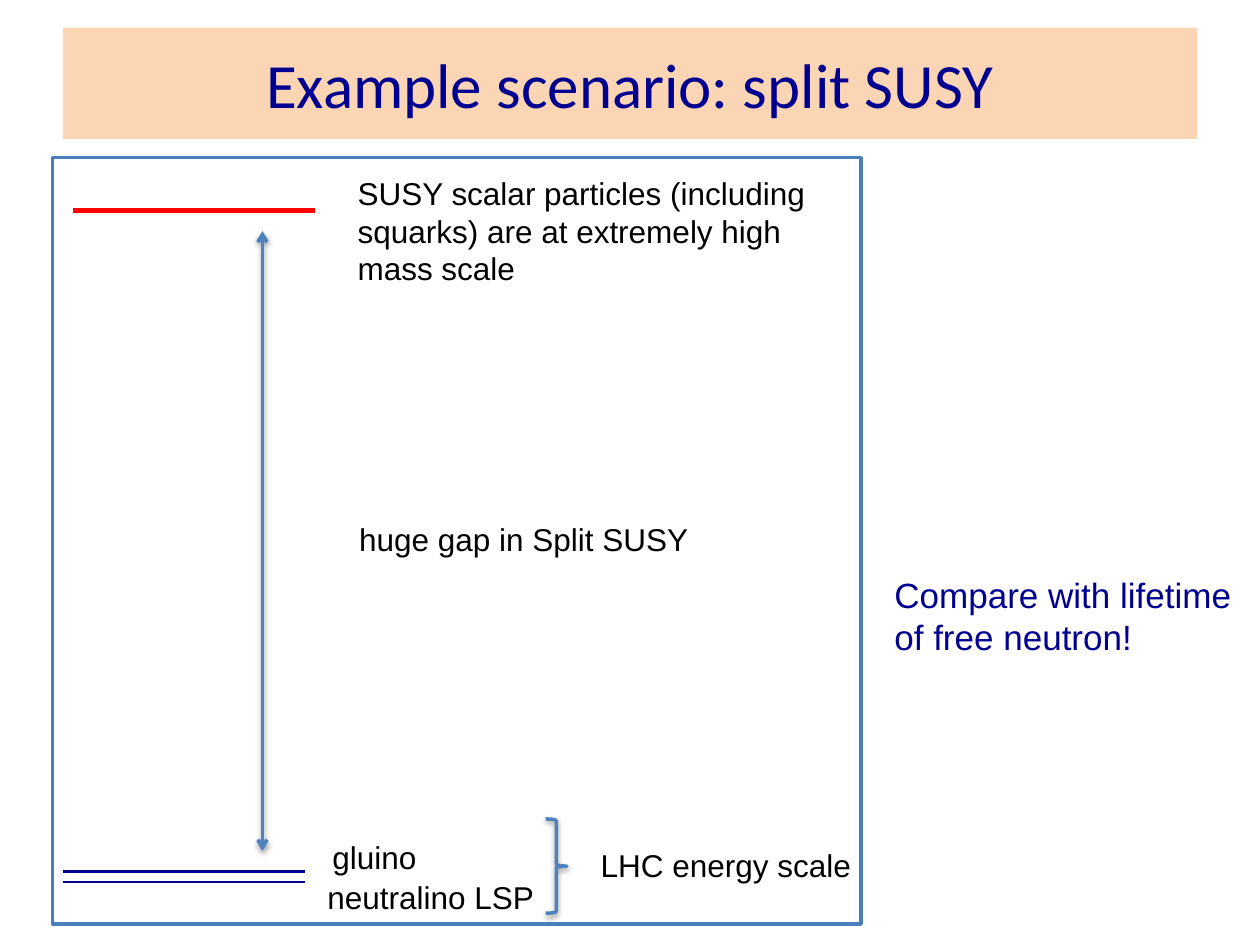
"""Build the split SUSY slide with its mass scale diagram."""
import lxml.etree
import pptx
import pptx.dml.color
import pptx.enum.shapes
import pptx.enum.text
import pptx.oxml
import pptx.oxml.ns
import pptx.util

Cm = pptx.util.Cm
Pt = pptx.util.Pt
MSO_SHAPE = pptx.enum.shapes.MSO_SHAPE
qn = pptx.oxml.ns.qn


def rgb(color):
    return pptx.dml.color.RGBColor.from_string(color)


def add_text(text, x, y, w, h, size=18, color="000000", font="Arial", fill=None):
    sp = s.shapes.add_textbox(Cm(x), Cm(y), Cm(w), Cm(h))
    tf = sp.text_frame
    tf.word_wrap = fill is not None
    if fill:
        sp.fill.solid()
        sp.fill.fore_color.rgb = rgb(fill)
        tf.vertical_anchor = pptx.enum.text.MSO_ANCHOR.MIDDLE
    else:
        tf.auto_size = pptx.enum.text.MSO_AUTO_SIZE.SHAPE_TO_FIT_TEXT
    for i, line in enumerate(text.split("\n")):
        p = tf.add_paragraph() if i else tf.paragraphs[0]
        if fill:
            p.alignment = pptx.enum.text.PP_ALIGN.CENTER
        r = p.add_run()
        r.text = line
        r.font.size = Pt(size)
        r.font.name = font
        r.font.color.rgb = rgb(color)


prs = pptx.Presentation()
prs.slide_width = Cm(25.4)
prs.slide_height = Cm(19.05)
s = prs.slides.add_slide(prs.slide_layouts[6])

add_text("Example scenario: split SUSY", 1.27, 0.56, 22.86, 2.24,
         size=36, color="000090", font="Calibri", fill="FCD5B5")

shadowed = []
for x1, y1, x2, y2, color, width in [
    (1.47, 4.24, 6.35, 4.24, "FF0000", 3),
    (1.27, 17.57, 6.15, 17.57, "000090", 1.5),
    (1.27, 17.78, 6.15, 17.78, "000090", 1.5),
    (5.29, 4.66, 5.29, 17.15, "4F81BD", 2),
]:
    sp = s.shapes.add_connector(
        pptx.enum.shapes.MSO_CONNECTOR.STRAIGHT, Cm(x1), Cm(y1), Cm(x2), Cm(y2))
    sp.line.color.rgb = rgb(color)
    sp.line.width = Pt(width)
    spPr = sp._element.spPr
    lxml.etree.SubElement(spPr, qn("a:effectLst"))
    if x1 == x2:
        for end in ("a:headEnd", "a:tailEnd"):
            lxml.etree.SubElement(spPr.find(qn("a:ln")), qn(end), type="arrow")
        shadowed.append(spPr)

for kind, x, y, w, h, color in [
    (MSO_SHAPE.RIGHT_BRACE, 11, 16.51, 0.43, 1.9, "4F81BD"),
    (MSO_SHAPE.RECTANGLE, 1.06, 3.18, 16.3, 15.45, "4B7EBC"),
]:
    sp = s.shapes.add_shape(kind, Cm(x), Cm(y), Cm(w), Cm(h))
    sp.fill.background()
    sp.line.color.rgb = rgb(color)
    sp.line.width = Pt(2)
    sp.shadow.inherit = False
    if kind == MSO_SHAPE.RIGHT_BRACE:
        shadowed.append(sp._element.spPr)

for spPr in shadowed:
    spPr.find(qn("a:effectLst")).append(pptx.oxml.parse_xml(
        '<a:outerShdw xmlns:a="http://schemas.openxmlformats.org/drawingml/2006/main" '
        'blurRad="40000" dist="20000" dir="5400000" rotWithShape="0">'
        '<a:srgbClr val="000000"><a:alpha val="38000"/></a:srgbClr></a:outerShdw>'))

add_text("SUSY scalar particles (including\nsquarks) are at extremely high\nmass scale",
         6.96, 3.38, 9.63, 2.57)
add_text("huge gap in Split SUSY", 6.99, 10.36, 7.21, 1.02)
add_text("gluino", 6.45, 16.76, 2.24, 1.02)
add_text("neutralino LSP", 6.35, 17.58, 4.7, 1.02)
add_text("LHC energy scale", 11.86, 16.94, 5.61, 1.02)
add_text("Compare with lifetime\nof free neutron!", 17.78, 11.43, 7.37, 1.96,
         size=20, color="000090")

prs.save("out.pptx")
